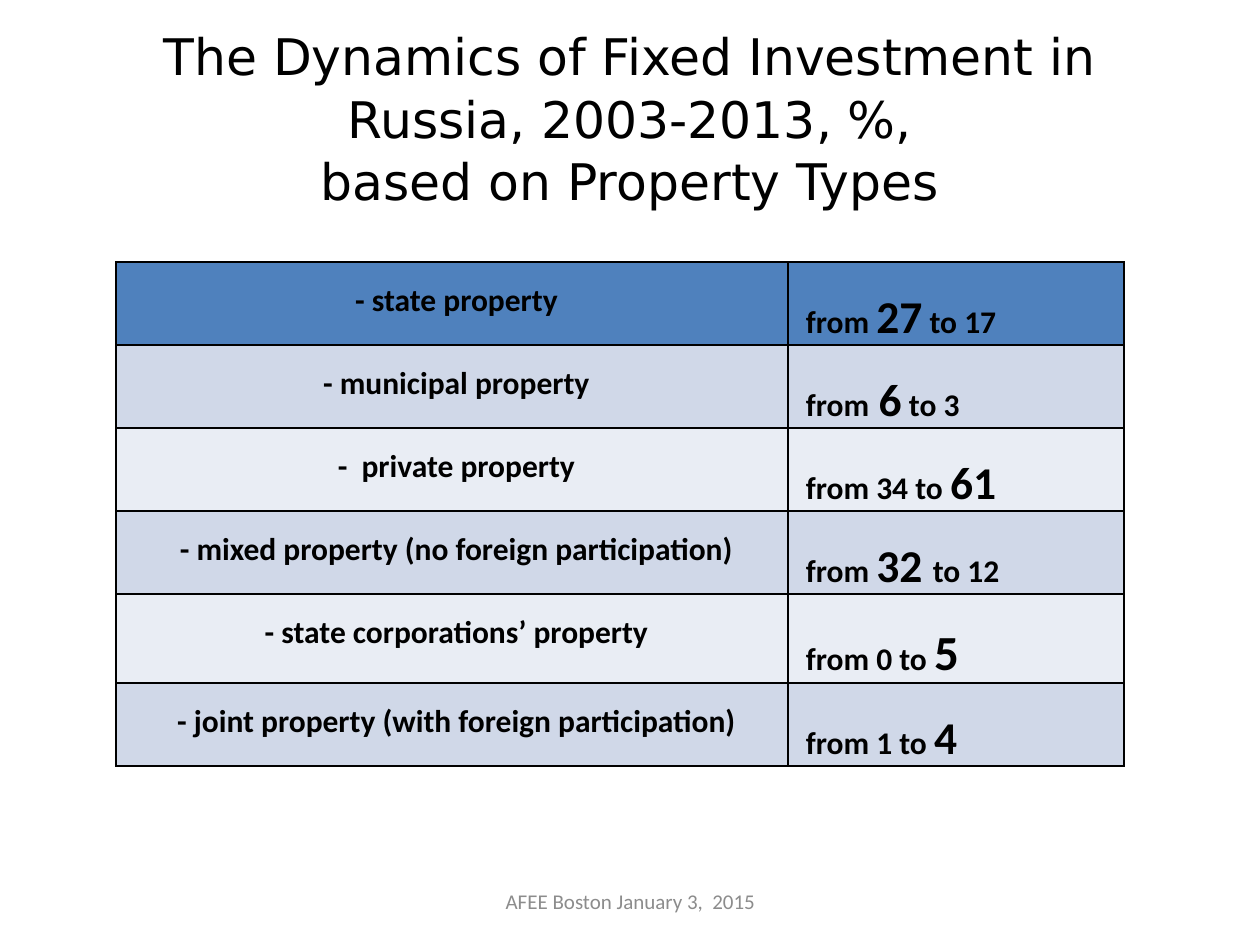
from dataclasses import dataclass

import lxml.etree
import pptx
import pptx.dml.color
import pptx.enum.text
import pptx.oxml.ns
import pptx.util

EMU_PER_PX = 914400 // 126
CENTER = pptx.enum.text.PP_ALIGN.CENTER
LEFT = pptx.enum.text.PP_ALIGN.LEFT
MIDDLE = pptx.enum.text.MSO_ANCHOR.MIDDLE


@dataclass(frozen=True)
class Theme:
    title_font: str = "DejaVu Sans"
    body_font: str = "Calibri"
    ink: str = "000000"
    muted: str = "8C8C8C"
    header_fill: str = "4F81BD"
    band_fills: tuple[str, str] = ("D0D8E8", "E9EDF4")
    title_size: float = 28.8
    body_size: float = 18
    accent_size: float = 26
    large_size: float = 28
    footer_size: float = 12
    border_width: float = 1


@dataclass(frozen=True)
class Span:
    text: str
    size: float


@dataclass(frozen=True)
class PropertyRow:
    label: str
    change: tuple[Span, ...]
    height: int = 83


@dataclass(frozen=True)
class TextBlock:
    text: str
    left: int
    top: int
    width: int
    height: int
    font: str
    size: float
    color: str
    spacing: float = 1.0


THEME = Theme()


def plain(text: str) -> Span:
    return Span(text, THEME.body_size)


def accent(text: str) -> Span:
    return Span(text, THEME.accent_size)


# Content
TITLE = TextBlock(
    "The Dynamics of Fixed Investment in Russia, 2003-2013, %,\vbased on Property Types",
    63, 38, 1134, 158, THEME.title_font, THEME.title_size, THEME.ink, 1.03,
)
FOOTER = TextBlock(
    "AFEE Boston January 3,  2015",
    431, 876, 399, 50, THEME.body_font, THEME.footer_size, THEME.muted,
)
ROWS = (
    PropertyRow("- state property", (plain("from "), accent("27"), plain(" to 17"))),
    PropertyRow("- municipal property",
                (plain("from"), Span(" ", 24), accent("6"), plain(" to 3"))),
    PropertyRow("-  private property", (plain("from 34 to "), accent("61"))),
    PropertyRow("- mixed property (no foreign participation)",
                (plain("from "), accent("32 "), plain("to 12"))),
    PropertyRow("- state corporations’ property",
                (plain("from 0 to "), Span("5", THEME.large_size)), 89),
    PropertyRow("- joint property (with foreign participation)",
                (plain("from 1 to "), accent("4"))),
)
TABLE_LEFT, TABLE_TOP = 116, 262
COLUMN_WIDTHS = (672, 336)
CELL_INSET = 9


def px(length: int) -> pptx.util.Emu:
    return pptx.util.Emu(length * EMU_PER_PX)


def rgb(color: str) -> pptx.dml.color.RGBColor:
    return pptx.dml.color.RGBColor.from_string(color)


def style_font(font, name: str, size: float, color: str, bold: bool = False) -> None:
    font.name = name
    font.size = pptx.util.Pt(size)
    font.color.rgb = rgb(color)
    font.bold = bold


def add_text(page, block: TextBlock) -> None:
    box = page.shapes.add_textbox(
        px(block.left), px(block.top), px(block.width), px(block.height))
    frame = box.text_frame
    frame.word_wrap = True
    frame.vertical_anchor = MIDDLE
    frame.text = block.text
    paragraph = frame.paragraphs[0]
    paragraph.alignment = CENTER
    paragraph.line_spacing = block.spacing
    for run in paragraph.runs:
        style_font(run.font, block.font, block.size, block.color)


def add_borders(cell) -> None:
    properties = cell._tc.get_or_add_tcPr()
    qn = pptx.oxml.ns.qn
    # Border lines must come before the cell fill
    for position, side in enumerate(("a:lnL", "a:lnR", "a:lnT", "a:lnB")):
        line = lxml.etree.Element(qn(side), w=str(pptx.util.Pt(THEME.border_width)))
        fill = lxml.etree.SubElement(line, qn("a:solidFill"))
        lxml.etree.SubElement(fill, qn("a:srgbClr"), val=THEME.ink)
        properties.insert(position, line)


def fill_cell(cell, spans: tuple[Span, ...], alignment, fill: str) -> None:
    cell.margin_left = cell.margin_right = px(CELL_INSET)
    cell.margin_top = cell.margin_bottom = 0
    cell.fill.solid()
    cell.fill.fore_color.rgb = rgb(fill)
    add_borders(cell)
    paragraph = cell.text_frame.paragraphs[0]
    paragraph.alignment = alignment
    paragraph.line_spacing = 1.5
    # First-line indent
    paragraph._p.get_or_add_pPr().set("indent", str(px(CELL_INSET)))
    for span in spans:
        run = paragraph.add_run()
        run.text = span.text
        style_font(run.font, THEME.body_font, span.size, THEME.ink, bold=True)


def add_property_table(page) -> None:
    table = page.shapes.add_table(
        len(ROWS), len(COLUMN_WIDTHS), px(TABLE_LEFT), px(TABLE_TOP),
        px(sum(COLUMN_WIDTHS)), px(sum(row.height for row in ROWS))).table
    for column, width in zip(table.columns, COLUMN_WIDTHS):
        column.width = px(width)
    for index, row in enumerate(ROWS):
        table.rows[index].height = px(row.height)
        fill = THEME.band_fills[(index - 1) % 2] if index else THEME.header_fill
        fill_cell(table.cell(index, 0), (plain(row.label),), CENTER, fill)
        fill_cell(table.cell(index, 1), row.change, LEFT, fill)


def main() -> None:
    deck = pptx.Presentation()
    deck.slide_width = pptx.util.Inches(10)
    deck.slide_height = pptx.util.Inches(7.5)
    page = deck.slides.add_slide(deck.slide_layouts[6])
    add_text(page, TITLE)
    add_property_table(page)
    add_text(page, FOOTER)
    deck.save("out.pptx")


if __name__ == "__main__":
    main()
